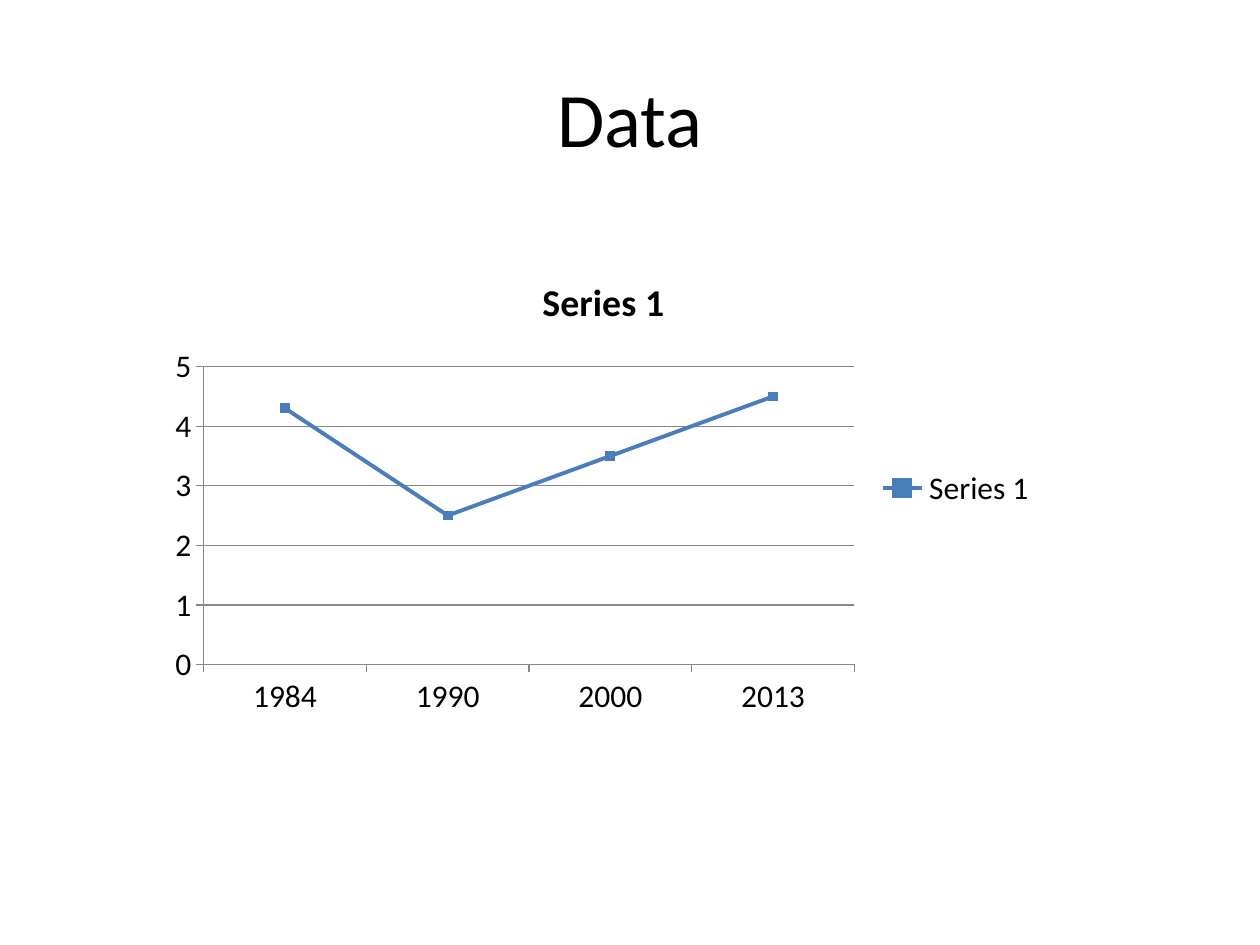
from dataclasses import dataclass

from pptx import Presentation
from pptx.chart.data import CategoryChartData
from pptx.dml.color import RGBColor
from pptx.enum.chart import XL_CHART_TYPE, XL_LEGEND_POSITION, XL_MARKER_STYLE, XL_TICK_MARK
from pptx.enum.text import MSO_ANCHOR, PP_ALIGN
from pptx.slide import Slide
from pptx.util import Inches, Pt


@dataclass(frozen=True)
class Theme:
    font: str = "Calibri"
    text: RGBColor = RGBColor(0x00, 0x00, 0x00)
    trend: RGBColor = RGBColor(0x4A, 0x7E, 0xBB)
    marker: RGBColor = RGBColor(0x4F, 0x81, 0xBD)
    grid: RGBColor = RGBColor(0x87, 0x87, 0x87)
    heading_size: Pt = Pt(44)
    chart_title_size: Pt = Pt(21.6)
    label_size: Pt = Pt(18)
    trend_width: Pt = Pt(2.25)
    grid_width: Pt = Pt(0.75)


@dataclass(frozen=True)
class Trend:
    name: str
    years: tuple[str, ...]
    values: tuple[float, ...]


THEME = Theme()
TREND = Trend("Series 1", ("1984", "1990", "2000", "2013"), (4.3, 2.5, 3.5, 4.5))


def style_font(font, size: Pt, bold: bool = False) -> None:
    font.name = THEME.font
    font.size = size
    font.bold = bold
    font.color.rgb = THEME.text


def style_line(line, color: RGBColor, width: Pt) -> None:
    line.color.rgb = color
    line.width = width


def add_heading(slide: Slide, wording: str) -> None:
    heading = slide.shapes.add_textbox(Inches(0.5), Inches(0.3), Inches(9), Inches(1.25))
    frame = heading.text_frame
    frame.word_wrap = True
    frame.vertical_anchor = MSO_ANCHOR.MIDDLE
    frame.text = wording
    paragraph = frame.paragraphs[0]
    paragraph.alignment = PP_ALIGN.CENTER
    style_font(paragraph.runs[0].font, THEME.heading_size)


def add_trend_chart(slide: Slide, trend: Trend) -> None:
    data = CategoryChartData()
    data.categories = trend.years
    data.add_series(trend.name, trend.values)
    chart = slide.shapes.add_chart(
        XL_CHART_TYPE.LINE_MARKERS, Inches(1.25), Inches(2), Inches(7.08), Inches(3.75), data
    ).chart
    style_font(chart.font, THEME.label_size)

    chart.has_title = True
    title = chart.chart_title.text_frame
    title.text = trend.name
    style_font(title.paragraphs[0].runs[0].font, THEME.chart_title_size, bold=True)

    chart.has_legend = True
    chart.legend.position = XL_LEGEND_POSITION.RIGHT
    chart.legend.include_in_layout = False

    for axis in (chart.category_axis, chart.value_axis):
        axis.major_tick_mark = XL_TICK_MARK.OUTSIDE
        axis.minor_tick_mark = XL_TICK_MARK.NONE
        style_line(axis.format.line, THEME.grid, THEME.grid_width)
    values = chart.value_axis
    values.minimum_scale, values.maximum_scale, values.major_unit = 0, 5, 1
    values.has_major_gridlines = True
    style_line(values.major_gridlines.format.line, THEME.grid, THEME.grid_width)

    plot = chart.plots[0]
    plot.vary_by_categories = False
    series = plot.series[0]
    series.smooth = False
    style_line(series.format.line, THEME.trend, THEME.trend_width)
    series.marker.style = XL_MARKER_STYLE.SQUARE
    series.marker.size = 5
    series.marker.format.fill.solid()
    series.marker.format.fill.fore_color.rgb = THEME.marker
    series.marker.format.line.color.rgb = THEME.trend


def main() -> None:
    presentation = Presentation()
    presentation.slide_width = Inches(10)
    presentation.slide_height = Inches(7.5)
    slide = presentation.slides.add_slide(presentation.slide_layouts[6])
    add_heading(slide, "Data")
    add_trend_chart(slide, TREND)
    presentation.save("out.pptx")


if __name__ == "__main__":
    main()
